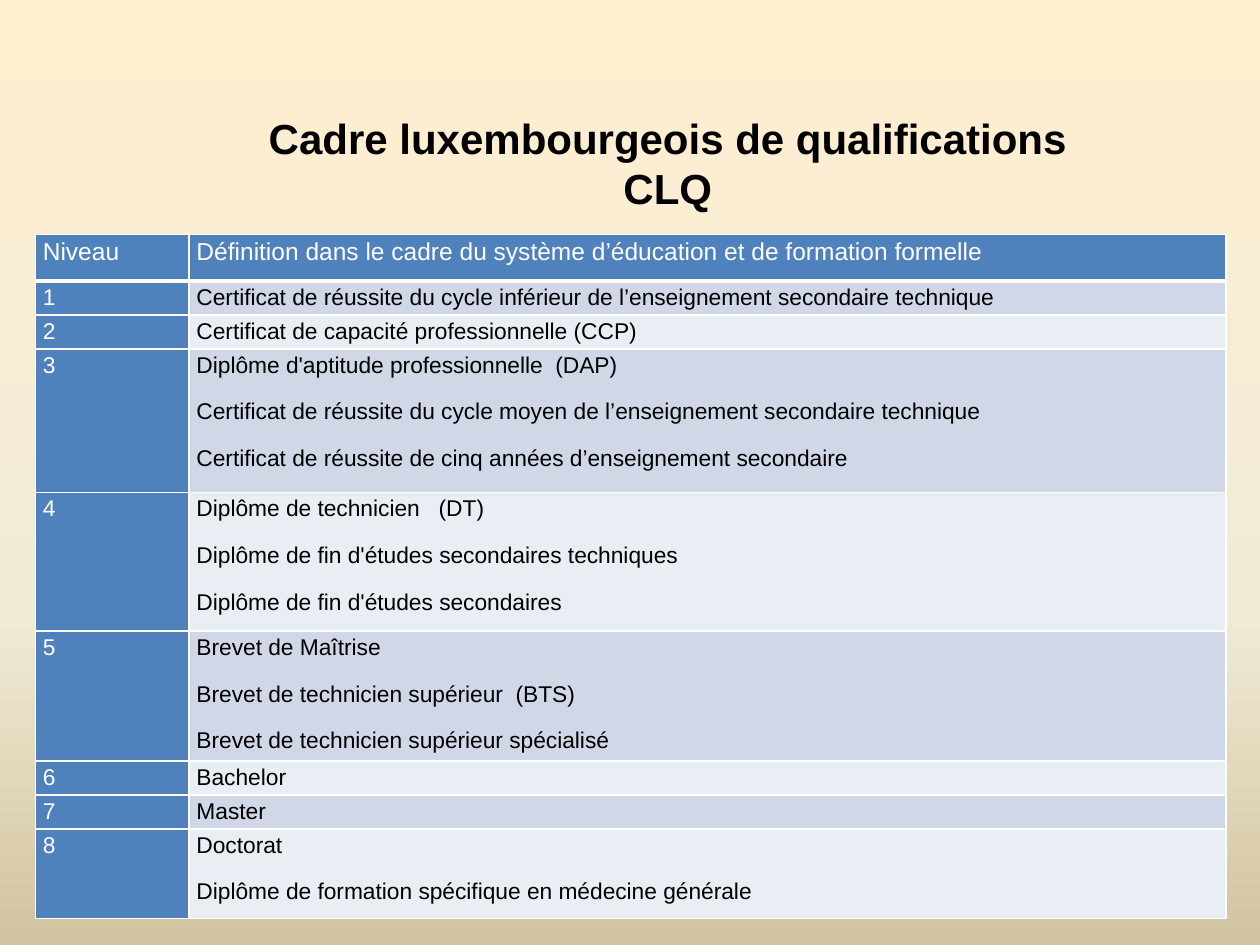
from lxml.etree import SubElement as Sub
from pptx import Presentation
from pptx.dml.color import RGBColor as RGB
from pptx.enum.text import MSO_AUTO_SIZE as Auto, PP_ALIGN as Align
from pptx.oxml.ns import qn
from pptx.util import Inches, Pt

BLACK = RGB(0x00, 0x00, 0x00)
WHITE = RGB(0xFF, 0xFF, 0xFF)
BLUE = RGB(0x4F, 0x81, 0xBD)
BANDS = [RGB(0xE9, 0xED, 0xF4), RGB(0xD0, 0xD8, 0xE8)]
STOPS = [
    (0, RGB(0xFF, 0xEF, 0xD1)),
    (65, RGB(0xF0, 0xEB, 0xD5)),
    (100, RGB(0xD1, 0xC3, 0x9F)),
]

TITLE = "Cadre luxembourgeois de qualifications CLQ"
HEAD = "Définition dans le cadre du système d’éducation et de formation formelle"
ROWS = [
    ("Niveau", 0.37, [HEAD]),
    ("1", 0.27, ["Certificat de réussite du cycle inférieur de l’enseignement secondaire technique"]),
    ("2", 0.27, ["Certificat de capacité professionnelle (CCP)"]),
    ("3", 1.14, [
        "Diplôme d'aptitude professionnelle  (DAP)",
        "Certificat de réussite du cycle moyen de l’enseignement secondaire technique",
        "Certificat de réussite de cinq années d’enseignement secondaire",
    ]),
    ("4", 1.1, [
        "Diplôme de technicien   (DT)",
        "Diplôme de fin d'études secondaires techniques",
        "Diplôme de fin d'études secondaires",
    ]),
    ("5", 1.03, [
        "Brevet de Maîtrise",
        "Brevet de technicien supérieur  (BTS)",
        "Brevet de technicien supérieur spécialisé",
    ]),
    ("6", 0.27, ["Bachelor"]),
    ("7", 0.27, ["Master"]),
    ("8", 0.71, ["Doctorat", "Diplôme de formation spécifique en médecine générale"]),
]
COLS = [1.22, 8.23]


def write(frame, lines, size, color, bold=False, align=Align.LEFT, space=None, after=None):
    for i, line in enumerate(lines):
        para = frame.paragraphs[0] if i == 0 else frame.add_paragraph()
        para.alignment = align
        para.line_spacing = space
        if after is not None:
            para.space_after = Pt(after)
        run = para.add_run()
        run.text = line
        run.font.name = "Arial"
        run.font.size = Pt(size)
        run.font.bold = bold
        run.font.color.rgb = color


def add_color(node, color):
    Sub(node, qn("a:srgbClr"), val=str(color))


def set_edges(cell, low):
    props = cell._tc.get_or_add_tcPr()
    for side, width in [("L", 1), ("R", 1), ("T", 1), ("B", low)]:
        line = Sub(props, qn(f"a:ln{side}"), w=str(Pt(width)))
        add_color(Sub(line, qn("a:solidFill")), WHITE)


def set_back(slide):
    fill = slide.background.fill
    fill.gradient()
    fill.gradient_angle = 270
    stops = slide.element.find(".//" + qn("a:gsLst"))
    for stop in list(stops):
        stops.remove(stop)
    for pos, color in STOPS:
        add_color(Sub(stops, qn("a:gs"), pos=str(pos * 1000)), color)


def add_levels(slide):
    high = sum(row[1] for row in ROWS)
    table = slide.shapes.add_table(
        len(ROWS), len(COLS), Inches(0.28), Inches(1.86), Inches(sum(COLS)), Inches(high)
    ).table
    for col, width in zip(table.columns, COLS):
        col.width = Inches(width)
    for r, (level, height, lines) in enumerate(ROWS):
        table.rows[r].height = Inches(height)
        for c, text in enumerate([[level], lines]):
            cell = table.cell(r, c)
            head = r == 0
            dark = head or c == 0
            set_edges(cell, 3 if head else 1)
            cell.fill.solid()
            cell.fill.fore_color.rgb = BLUE if dark else BANDS[r % 2]
            cell.margin_left = cell.margin_right = Inches(0.06)
            cell.margin_top = cell.margin_bottom = 0
            write(cell.text_frame, text, 14 if head else 13,
                  WHITE if dark else BLACK, space=1.15, after=10)


def add_title(slide):
    box = slide.shapes.add_textbox(Inches(1.68), Inches(0.84), Inches(7.24), Inches(0.91))
    frame = box.text_frame
    frame.word_wrap = True
    frame.auto_size = Auto.SHAPE_TO_FIT_TEXT
    write(frame, [TITLE], 24, BLACK, bold=True, align=Align.CENTER)


def main():
    deck = Presentation()
    deck.slide_width = Inches(10)
    deck.slide_height = Inches(7.5)
    slide = deck.slides.add_slide(deck.slide_layouts[6])
    set_back(slide)
    add_levels(slide)
    add_title(slide)
    deck.save("out.pptx")


if __name__ == "__main__":
    main()
